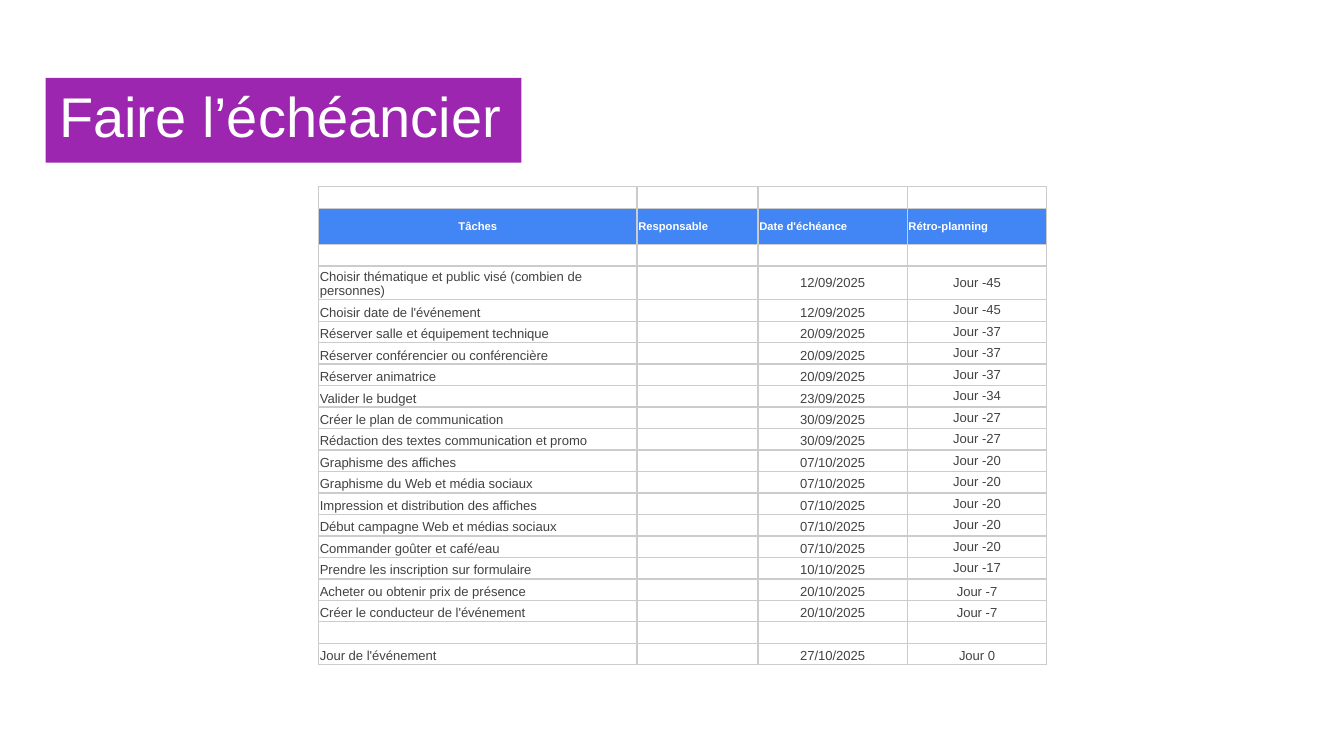
from dataclasses import dataclass

from lxml import etree
from pptx import Presentation
from pptx.dml.color import RGBColor
from pptx.enum.text import MSO_ANCHOR, MSO_AUTO_SIZE, PP_ALIGN
from pptx.oxml.ns import qn
from pptx.util import Inches, Pt

LEFT, CENTER = PP_ALIGN.LEFT, PP_ALIGN.CENTER
MIDDLE, BOTTOM = MSO_ANCHOR.MIDDLE, MSO_ANCHOR.BOTTOM
FONT = "Arial"
PURPLE, BLUE, WHITE, GREY, BORDER = "9C26B0", "4285F4", "FFFFFF", "424242", "CCCCCC"
COL_WIDTHS = (2.37, 0.9, 1.11, 1.04)
ROW_HEIGHT, HEADER_HEIGHT, TWO_LINE_HEIGHT = 0.16, 0.27, 0.25


@dataclass
class Task:
    name: str
    due: str
    days: int
    due_anchor: MSO_ANCHOR = BOTTOM
    days_anchor: MSO_ANCHOR = MIDDLE
    height: float = ROW_HEIGHT


HEADERS = ("Tâches", "Responsable", "Date d'échéance", "Rétro-planning")
TASKS = (
    Task("Choisir thématique et public visé (combien de personnes)", "12/09/2025", -45,
         due_anchor=MIDDLE, height=TWO_LINE_HEIGHT),
    Task("Choisir date de l'événement", "12/09/2025", -45),
    Task("Réserver salle et équipement technique", "20/09/2025", -37),
    Task("Réserver conférencier ou conférencière", "20/09/2025", -37),
    Task("Réserver animatrice", "20/09/2025", -37),
    Task("Valider le budget", "23/09/2025", -34),
    Task("Créer le plan de communication", "30/09/2025", -27),
    Task("Rédaction des textes communication et promo", "30/09/2025", -27),
    Task("Graphisme des affiches", "07/10/2025", -20),
    Task("Graphisme du Web et média sociaux", "07/10/2025", -20),
    Task("Impression et distribution des affiches", "07/10/2025", -20),
    Task("Début campagne Web et médias sociaux", "07/10/2025", -20),
    Task("Commander goûter et café/eau", "07/10/2025", -20),
    Task("Prendre les inscription sur formulaire", "10/10/2025", -17),
    Task("Acheter ou obtenir prix de présence", "20/10/2025", -7, days_anchor=BOTTOM),
    Task("Créer le conducteur de l'événement", "20/10/2025", -7, days_anchor=BOTTOM),
)
EVENT = Task("Jour de l'événement", "27/10/2025", 0, days_anchor=BOTTOM)
# None is an empty spacer row
ROWS = (None, HEADERS, None, *TASKS, None, EVENT)


def rgb(color: str) -> RGBColor:
    return RGBColor.from_string(color)


def write(tf, text: str, *, size: float, color: str, bold=False, align=LEFT) -> None:
    p = tf.paragraphs[0]
    p.alignment = align
    r = p.add_run()
    r.text = text
    r.font.name, r.font.size, r.font.bold = FONT, Pt(size), bold
    r.font.color.rgb = rgb(color)


def add_borders(cell, color: str, width: float) -> None:
    tcPr = cell._tc.get_or_add_tcPr()
    for side in ("a:lnL", "a:lnR", "a:lnT", "a:lnB"):
        ln = etree.SubElement(tcPr, qn(side), w=str(Pt(width)))
        fill = etree.SubElement(ln, qn("a:solidFill"))
        etree.SubElement(fill, qn("a:srgbClr"), val=color)


def format_cell(cell) -> None:
    cell.margin_left = cell.margin_right = Inches(0.01)
    cell.margin_top = cell.margin_bottom = Inches(0.01)
    add_borders(cell, BORDER, 0.75)
    cell.fill.background()


def fill_cell(cell, text: str, anchor: MSO_ANCHOR, **fmt) -> None:
    cell.vertical_anchor = anchor
    write(cell.text_frame, text, **fmt)


def fill_header(cells) -> None:
    for cell, text in zip(cells, HEADERS):
        cell.fill.solid()
        cell.fill.fore_color.rgb = rgb(BLUE)
        fill_cell(cell, text, MIDDLE, size=6, color=WHITE, bold=True,
                  align=CENTER if text == HEADERS[0] else LEFT)


def fill_task(cells, task: Task) -> None:
    name, _, due, days = cells
    fill_cell(name, task.name, BOTTOM, size=7, color=GREY)
    fill_cell(due, task.due, task.due_anchor, size=7, color=GREY, align=CENTER)
    fill_cell(days, f"Jour {task.days}", task.days_anchor, size=7, color=GREY, align=CENTER)


def shrink_if_empty(cell) -> None:
    """Keep an empty cell from stretching its row."""
    if not cell.text:
        p = cell.text_frame.paragraphs[0]
        etree.SubElement(p._p, qn("a:endParaRPr"), sz="700")


# Widescreen 16:9 slide
prs = Presentation()
prs.slide_width = Inches(10)
prs.slide_height = prs.slide_width * 9 // 16
s = prs.slides.add_slide(prs.slide_layouts[5])

# Title
sp = s.shapes.title
sp.left, sp.top, sp.width, sp.height = map(Inches, (0.34, 0.58, 3.54, 0.63))
sp.fill.solid()
sp.fill.fore_color.rgb = rgb(PURPLE)
tf = sp.text_frame
tf.auto_size, tf.word_wrap, tf.vertical_anchor = MSO_AUTO_SIZE.NONE, True, BOTTOM
tf.margin_left = tf.margin_right = tf.margin_top = tf.margin_bottom = Inches(0.1)
write(tf, "Faire l’échéancier", size=30, color=WHITE)

# Schedule table
table = s.shapes.add_table(len(ROWS), len(COL_WIDTHS), Inches(2.37), Inches(1.39),
                           Inches(sum(COL_WIDTHS)), Inches(3.55)).table
table.first_row = table.horz_banding = False
for col, width in zip(table.columns, COL_WIDTHS):
    col.width = Inches(width)
for row, content in zip(table.rows, ROWS):
    row.height = Inches(ROW_HEIGHT)
    cells = list(row.cells)
    for cell in cells:
        format_cell(cell)
    if content is HEADERS:
        row.height = Inches(HEADER_HEIGHT)
        fill_header(cells)
    elif content:
        row.height = Inches(content.height)
        fill_task(cells, content)
    for cell in cells:
        shrink_if_empty(cell)

prs.save("out.pptx")
